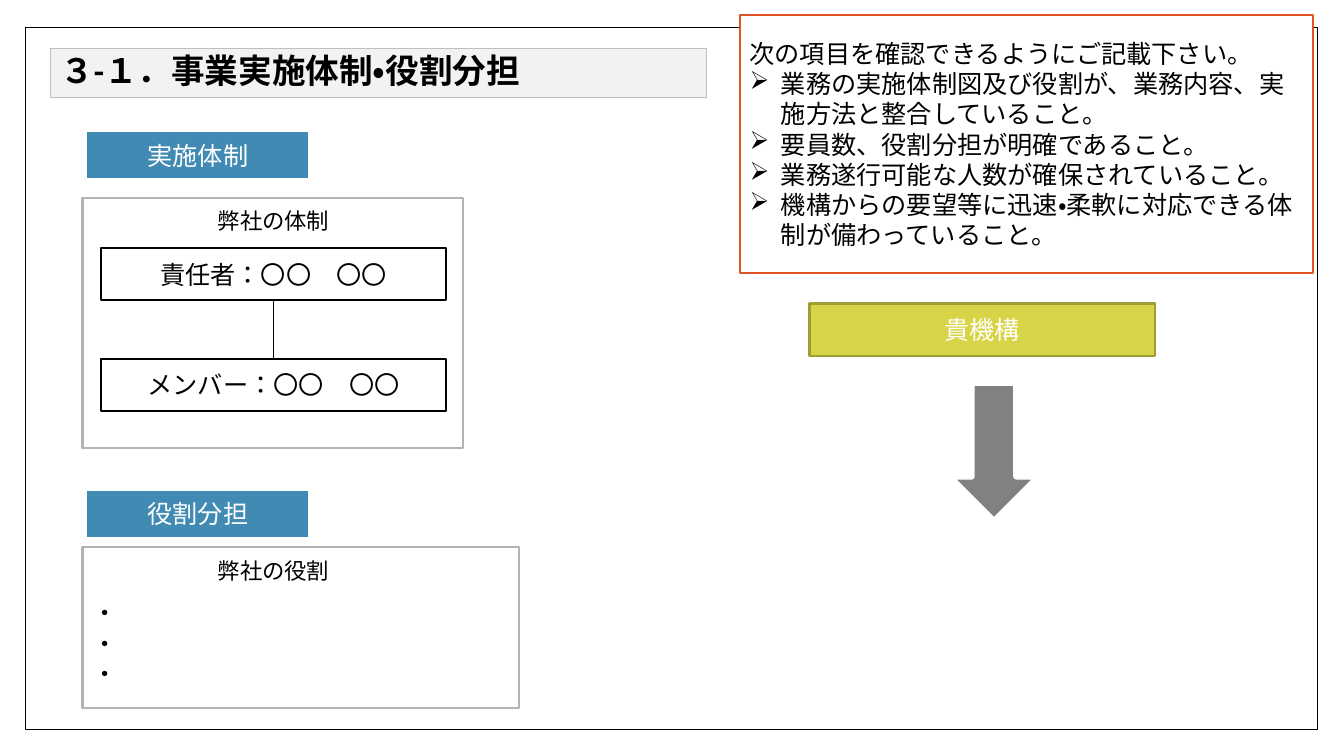
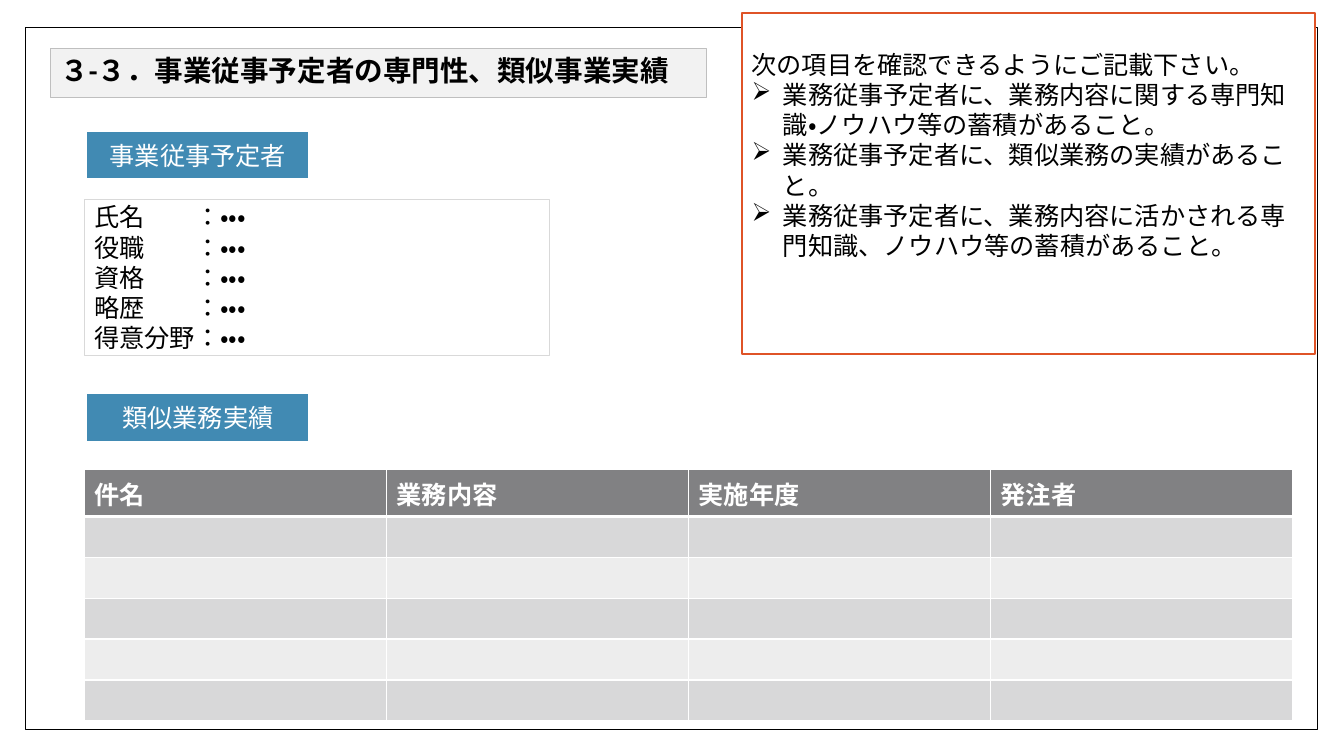
from dataclasses import dataclass

from lxml.etree import SubElement
from pptx import Presentation
from pptx.dml.color import RGBColor
from pptx.enum.lang import MSO_LANGUAGE_ID as Language
from pptx.enum.shapes import MSO_CONNECTOR as Connector
from pptx.enum.shapes import MSO_SHAPE as Shape
from pptx.enum.text import MSO_ANCHOR as Anchor
from pptx.enum.text import PP_ALIGN as Align
from pptx.oxml.ns import qn
from pptx.util import Cm, Pt


@dataclass(frozen=True)
class Theme:
    font: str = "Calibri"
    profile_font: str = "Arial"
    black: str = "000000"
    white: str = "FFFFFF"
    title_fill: str = "F2F2F2"
    title_line: str = "BFBFBF"
    tag: str = "418AB3"
    panel_line: str = "B3B3B5"
    profile_line: str = "D9D9D9"
    client: str = "D7D447"
    client_line: str = "9F9D35"
    grey: str = "818183"
    callout: str = "DF5327"
    bands: tuple = ("D8D8D9", "EDEDED")
    body: float = 18
    caption: float = 16
    title: float = 24
    long_title: float = 20.4


THEME = Theme()
ROLE_SIZE = (8.71, 1.32)
CALLOUT_INTRO = "次の項目を確認できるようにご記載下さい。"


def rgb(value):
    return RGBColor.from_string(value)


def style_paragraph(paragraph, size, color, align=Align.LEFT, bold=False, font=THEME.font):
    paragraph.alignment = align
    for run in paragraph.runs:
        run.font.name = font
        run.font.size = Pt(size)
        run.font.bold = bold
        run.font.color.rgb = rgb(color)
        run.font.language_id = Language.JAPANESE


def write(shape, text, size=THEME.body, color=THEME.black, align=Align.LEFT, **style):
    frame = shape.text_frame
    frame.word_wrap = True
    frame.vertical_anchor = Anchor.MIDDLE
    frame.text = text
    for paragraph in frame.paragraphs:
        style_paragraph(paragraph, size, color, align, **style)
    return frame


def add_box(slide, left, top, width, height, fill=None, line=THEME.black,
            weight=1.5, kind=Shape.RECTANGLE):
    box = slide.shapes.add_shape(kind, Cm(left), Cm(top), Cm(width), Cm(height))
    box.shadow.inherit = False
    if fill:
        box.fill.solid()
        box.fill.fore_color.rgb = rgb(fill)
    else:
        box.fill.background()
    box.line.color.rgb = rgb(line)
    box.line.width = Pt(weight)
    return box


def add_page(deck, title, size, line_spacing):
    slide = deck.slides.add_slide(deck.slide_layouts[6])
    add_box(slide, 0.64, 0.69, 32.56, 17.7, THEME.white, weight=1)
    band = add_box(slide, 1.27, 1.22, 16.54, 1.24, THEME.title_fill, THEME.title_line, 0.75)
    frame = write(band, title, size, bold=True)
    frame.paragraphs[0].line_spacing = line_spacing
    return slide


def add_tag(slide, top, text):
    tag = add_box(slide, 2.13, top, 5.72, 1.32, THEME.tag, THEME.white, 4.25)
    write(tag, text, color=THEME.white, align=Align.CENTER)


def add_role(slide, left, top, text, fill=THEME.white, line=THEME.black, color=THEME.black):
    role = add_box(slide, left, top, *ROLE_SIZE, fill, line)
    write(role, text, color=color, align=Align.CENTER)
    return role


def add_caption(slide, top, text):
    caption = slide.shapes.add_textbox(Cm(4.67), Cm(top), Cm(4.45), Cm(0.91))
    write(caption, text, THEME.caption, align=Align.CENTER)


def join_roles(slide, upper, lower):
    link = slide.shapes.add_connector(Connector.STRAIGHT, 0, 0, 0, 0)
    link.begin_connect(upper, 2)
    link.end_connect(lower, 0)
    link.line.color.rgb = rgb(THEME.black)
    link.line.width = Pt(0.79)
    SubElement(link.element.spPr, qn("a:effectLst"))


def add_callout(slide, left, top, height, checks, bottom_inset=0.13):
    callout = add_box(slide, left, top, 14.45, height, THEME.white, THEME.callout,
                      kind=Shape.FLOWCHART_PROCESS)
    frame = write(callout, "\n".join([CALLOUT_INTRO, *checks]))
    frame.margin_bottom = Cm(bottom_inset)
    for paragraph in frame.paragraphs[1:]:
        properties = paragraph._p.get_or_add_pPr()
        properties.set("marL", str(Cm(0.79)))
        properties.set("indent", str(-Cm(0.79)))
        SubElement(properties, qn("a:buChar"), char="➢")


def add_profile(slide, labels):
    profile = add_box(slide, 2.13, 5.03, 11.71, 3.91, THEME.white, THEME.profile_line, 0.25)
    longest = max(map(len, labels))
    rows = [label + ("\t" if len(label) < longest else "") + "：・・・" for label in labels]
    frame = write(profile, "\n".join(rows), font=THEME.profile_font)
    for paragraph in frame.paragraphs:
        tabs = SubElement(paragraph._p.get_or_add_pPr(), qn("a:tabLst"))
        SubElement(tabs, qn("a:tab"), pos=str(Pt(longest * THEME.body)), algn="l")


def set_borders(cell, top, bottom):
    properties = cell._tc.get_or_add_tcPr()
    for side, weight in (("L", 1), ("R", 1), ("T", top), ("B", bottom)):
        border = SubElement(properties, qn(f"a:ln{side}"), w=str(Pt(weight)))
        fill = SubElement(border, qn("a:solidFill"))
        SubElement(fill, qn("a:srgbClr"), val=THEME.white)


def add_records(slide, headings, blank_rows):
    row_count = blank_rows + 1
    table = slide.shapes.add_table(row_count, len(headings), Cm(2.13), Cm(11.84),
                                   Cm(30.45), Cm(1.03 * row_count)).table
    for row in range(row_count):
        for column, heading in enumerate(headings):
            cell = table.cell(row, column)
            set_borders(cell, 3 if row == 1 else 1, 3 if row == 0 else 1)
            cell.fill.solid()
            cell.fill.fore_color.rgb = rgb(THEME.bands[(row - 1) % 2] if row else THEME.grey)
            if row == 0:
                cell.text_frame.text = heading
                style_paragraph(cell.text_frame.paragraphs[0], THEME.body, THEME.white, bold=True)


def build_organisation(deck):
    slide = add_page(deck, "３-１．事業実施体制・役割分担", THEME.title, 0.9)
    add_tag(slide, 3.25, "実施体制")
    add_box(slide, 2.08, 5, 9.6, 6.3, line=THEME.panel_line)
    add_caption(slide, 5.11, "弊社の体制")
    leader = add_role(slide, 2.54, 6.25, "責任者：〇〇　〇〇")
    member = add_role(slide, 2.54, 9.04, "メンバー：〇〇　〇〇")
    join_roles(slide, leader, member)

    add_tag(slide, 12.29, "役割分担")
    duties = add_box(slide, 2.08, 13.79, 11, 4.06, line=THEME.panel_line)
    write(duties, "\n".join(["・"] * 3)).margin_top = Cm(0.89)
    add_caption(slide, 13.92, "弊社の役割")

    add_role(slide, 20.4, 7.65, "貴機構", THEME.client, THEME.client_line, THEME.white)
    add_box(slide, 23.93, 9.65, 2.24, 3.48, THEME.grey, THEME.white, 4.25, Shape.DOWN_ARROW)
    add_callout(slide, 18.64, 0.38, 6.5, [
        "業務の実施体制図及び役割が、業務内容、実施方法と整合していること。",
        "要員数、役割分担が明確であること。",
        "業務遂行可能な人数が確保されていること。",
        "機構からの要望等に迅速・柔軟に対応できる体制が備わっていること。",
    ])


def build_expertise(deck):
    slide = add_page(deck, "３-３．事業従事予定者の専門性、類似事業実績", THEME.long_title, 0.8)
    add_tag(slide, 3.25, "事業従事予定者")
    add_profile(slide, ["氏名", "役職", "資格", "略歴", "得意分野"])
    add_tag(slide, 9.86, "類似業務実績")
    add_records(slide, ["件名", "業務内容", "実施年度", "発注者"], 5)
    add_callout(slide, 18.69, 0.33, 8.59, [
        "業務従事予定者に、業務内容に関する専門知識・ノウハウ等の蓄積があること。",
        "業務従事予定者に、類似業務の実績があること。",
        "業務従事予定者に、業務内容に活かされる専門知識、ノウハウ等の蓄積があること。",
    ], bottom_inset=1.57)


def main():
    deck = Presentation()
    deck.slide_width, deck.slide_height = Cm(33.87), Cm(19.05)
    build_organisation(deck)
    build_expertise(deck)
    deck.save("out.pptx")


if __name__ == "__main__":
    main()
